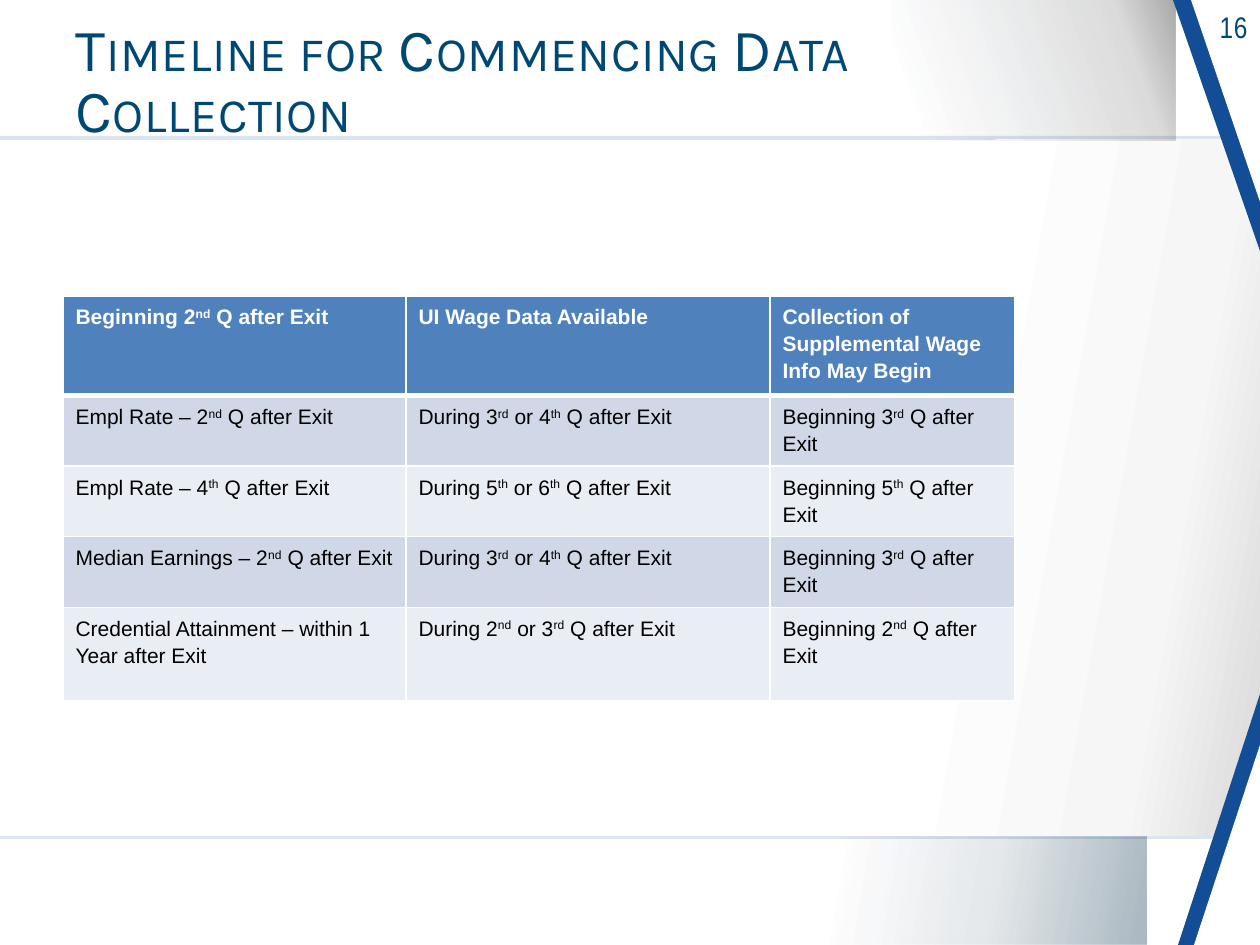
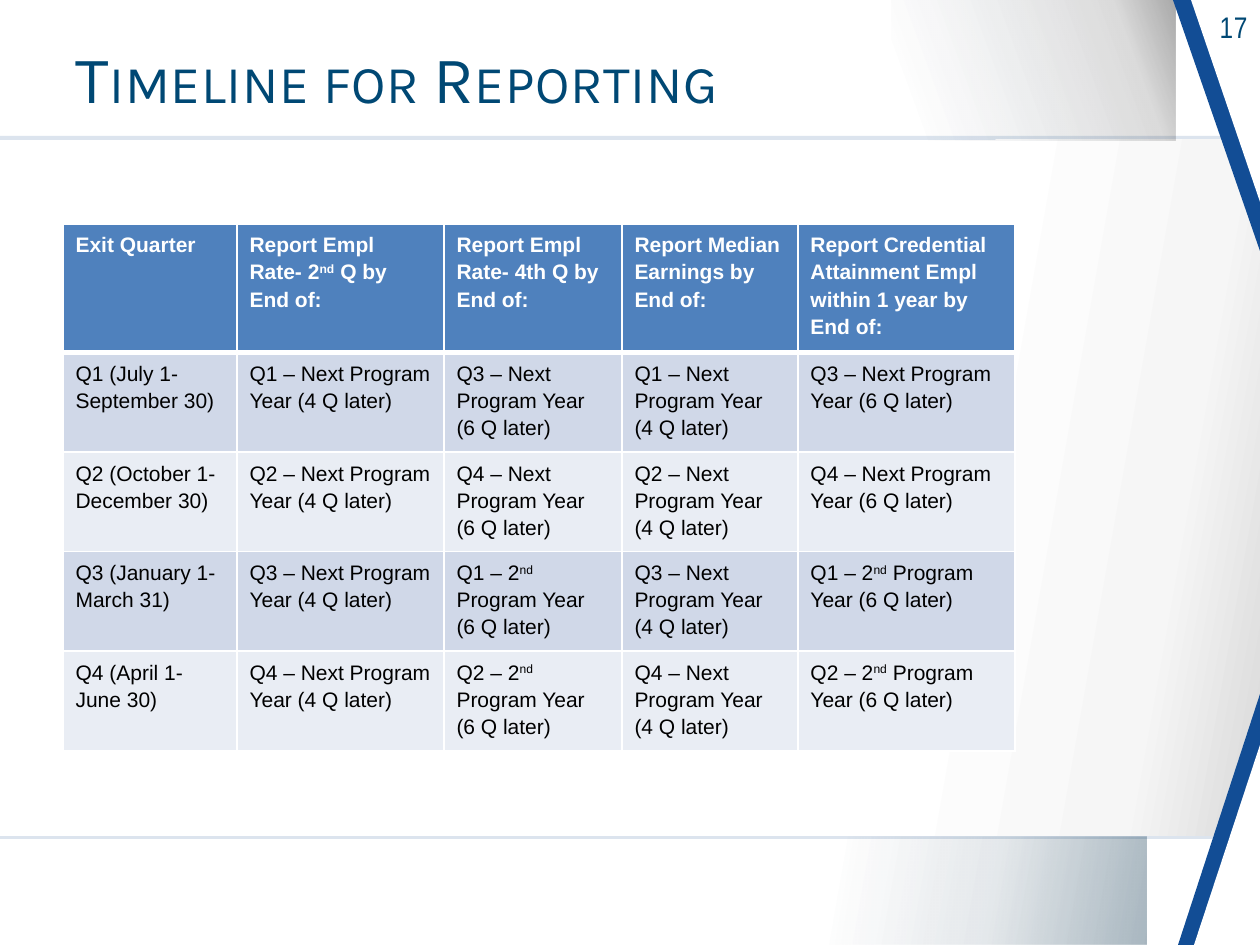
"""Build two timeline slides that share one frame, title style and table style."""
from lxml import etree
from pptx import Presentation
from pptx import util as u
from pptx.dml.color import RGBColor
from pptx.enum import shapes, text
from pptx.oxml.ns import qn

PX_PER_INCH = 126
COLOURS = {
    "white": "FFFFFF", "black": "000000", "navy": "002C47", "title": "004874",
    "edge": "124D95", "band": "275A99", "pale": "F6F6F6", "grey": "D9D9D9",
    "header": "4F81BD", "odd": "D0D8E8", "even": "E9EDF4",
}
TITLE_BOX = (63, 30, 953, 107)
NUMBER_BOX = (1159, 3, 101, 49)

COMMENCING_ROWS = [
    ["Beginning 2^nd^ Q after Exit", "UI Wage Data Available",
     "Collection of Supplemental Wage Info May Begin"],
    ["Empl Rate – 2^nd^ Q after Exit", "During 3^rd^ or 4^th^ Q after Exit",
     "Beginning 3^rd^ Q after Exit"],
    ["Empl Rate – 4^th^ Q after Exit", "During 5^th^ or 6^th^ Q after Exit",
     "Beginning 5^th^ Q after Exit"],
    ["Median Earnings – 2^nd^ Q after Exit", "During 3^rd^ or 4^th^ Q after Exit",
     "Beginning 3^rd^ Q after Exit"],
    ["Credential Attainment – within 1 Year after Exit",
     "During 2^nd^ or 3^rd^ Q after Exit", "Beginning 2^nd^ Q after Exit"],
]
REPORTING_HEADER = [
    "Exit Quarter", "Report Empl Rate- 2^nd^ Q by End of:",
    "Report Empl Rate- 4th Q by End of:", "Report Median Earnings by End of:",
    "Report Credential Attainment Empl within 1 year by End of:",
]
EXIT_QUARTERS = [
    ("Q1 (July 1-September 30)", "Q1", "Q3 – Next"),
    ("Q2 (October 1- December 30)", "Q2", "Q4 – Next"),
    ("Q3 (January 1- March 31)", "Q3", "Q1 – 2^nd^"),
    ("Q4 (April 1- June 30)", "Q4", "Q2 – 2^nd^"),
]


def px(length):
    """Turn px into EMU."""
    return u.Emu(round(length * u.Inches(1) / PX_PER_INCH))


def box_emu(box):
    """Turn a px box into EMU lengths."""
    return [px(length) for length in box]


def rgb(name):
    """Look up a named colour."""
    return RGBColor.from_string(COLOURS[name])


def add_solid(parent, name, opacity=100):
    """Append a colour element with an opacity in percent."""
    colour = etree.SubElement(parent, qn("a:srgbClr"), val=COLOURS[name])
    if opacity < 100:
        etree.SubElement(colour, qn("a:alpha"), val=str(opacity * 1000))


def add_panel(slide, kind, box, colour="white", opacity=100):
    """Add a borderless, shadowless shape with a solid fill."""
    shape = slide.shapes.add_shape(kind, *box_emu(box))
    shape.shadow.inherit = False
    shape.line.fill.background()
    shape.fill.solid()
    shape.fill.fore_color.rgb = rgb(colour)
    if opacity < 100:
        fill = shape.element.spPr.find(qn("a:solidFill"))
        fill.clear()
        add_solid(fill, colour, opacity)
    return shape


def add_gradient(slide, box, angle, stops):
    """Add a rectangle whose fill runs through (position, colour, opacity) stops."""
    shape = add_panel(slide, shapes.MSO_SHAPE.RECTANGLE, box)
    solid = shape.element.spPr.find(qn("a:solidFill"))
    gradient = etree.Element(qn("a:gradFill"), rotWithShape="1")
    stop_list = etree.SubElement(gradient, qn("a:gsLst"))
    for position, colour, opacity in stops:
        stop = etree.SubElement(stop_list, qn("a:gs"), pos=str(position * 1000))
        add_solid(stop, colour, opacity)
    etree.SubElement(gradient, qn("a:lin"), ang=str(angle * 60000), scaled="0")
    solid.getparent().replace(solid, gradient)


def add_corner(slide, box, colour, top):
    """Add a right-angled triangle against the right edge, at the top or bottom."""
    shape = add_panel(slide, shapes.MSO_SHAPE.ISOSCELES_TRIANGLE, box, colour)
    shape.adjustments[0] = 1
    if top:
        shape.element.spPr.find(qn("a:xfrm")).set("flipV", "1")


def draw_frame(slide, layout):
    """Draw the bands and corners and move them to the shared layout."""
    before = len(slide.shapes)
    add_panel(slide, shapes.MSO_SHAPE.RECTANGLE, (0, 136, 1260, 703), "band", 16)
    add_gradient(slide, (0, 140, 1260, 696), 10,
                 [(0, "white", 100), (72, "white", 100), (90, "pale", 100), (100, "grey", 100)])
    add_gradient(slide, (810, 837, 337, 108), 10,
                 [(10, "navy", 0), (56, "navy", 11), (100, "navy", 34)])
    add_gradient(slide, (892, 0, 283, 141), 340,
                 [(10, "navy", 0), (81, "black", 14), (100, "black", 34)])
    add_corner(slide, (1173, 0, 87, 251), "edge", True)
    add_corner(slide, (1191, 0, 69, 202), "white", True)
    add_corner(slide, (1178, 694, 82, 251), "edge", False)
    add_corner(slide, (1194, 745, 66, 200), "white", False)
    for shape in list(slide.shapes)[before:]:
        layout.shapes.element.append(shape.element)


def style_font(font, name, size, colour, bold=False):
    """Set face, size, colour and weight."""
    font.name = name
    font.size = u.Pt(size)
    font.color.rgb = rgb(colour)
    font.bold = bold


def set_title(slide, box, title, size):
    """Place the title placeholder and give it small capitals."""
    shape = slide.shapes.title
    shape.left, shape.top, shape.width, shape.height = box_emu(box)
    frame = shape.text_frame
    frame.text = title
    frame.word_wrap = True
    frame.auto_size = text.MSO_AUTO_SIZE.NONE
    frame.vertical_anchor = text.MSO_ANCHOR.MIDDLE
    paragraph = frame.paragraphs[0]
    paragraph.alignment = text.PP_ALIGN.LEFT
    paragraph.line_spacing = 0.85
    style_font(paragraph.font, "Karla", size, "title")
    properties = paragraph.runs[0].font._element
    properties.set("cap", "small")
    properties.set("spc", "40")


def add_number(slide, box, number):
    """Add the page number in the top right corner."""
    frame = slide.shapes.add_textbox(*box_emu(box)).text_frame
    frame.word_wrap = True
    frame.text = str(number)
    paragraph = frame.paragraphs[0]
    paragraph.alignment = text.PP_ALIGN.RIGHT
    style_font(paragraph.font, "Arial Narrow", 17, "title")
    paragraph.runs[0].font._element.set("spc", "40")


def set_borders(cell, top, bottom):
    """Give a cell white borders, with top and bottom widths in points."""
    properties = cell._tc.get_or_add_tcPr()
    for side, width in (("L", 1), ("R", 1), ("T", top), ("B", bottom)):
        line = etree.SubElement(properties, qn(f"a:ln{side}"), w=str(u.Pt(width)))
        add_solid(etree.SubElement(line, qn("a:solidFill")), "white")


def fill_cell(cell, content, row):
    """Write a cell, raising the parts between carets, and style it by its row."""
    paragraph = cell.text_frame.paragraphs[0]
    paragraph.line_spacing = 1.15
    style_font(paragraph.font, "Arial", 12, "black" if row else "white", row == 0)
    for index, part in enumerate(content.split("^")):
        if part:
            run = paragraph.add_run()
            run.text = part
            if index % 2:
                run.font._element.set("baseline", "30000")
    set_borders(cell, 3 if row == 1 else 1, 1 if row else 3)
    cell.fill.solid()
    cell.fill.fore_color.rgb = rgb(("odd" if row % 2 else "even") if row else "header")


def add_timeline(slide, left, top, widths, heights, rows):
    """Add a timeline table from its corner, column widths and row heights."""
    box = (left, top, sum(widths), sum(heights))
    table = slide.shapes.add_table(len(rows), len(widths), *box_emu(box)).table
    for column, width in zip(table.columns, widths):
        column.width = px(width)
    for row, (height, contents) in enumerate(zip(heights, rows)):
        table.rows[row].height = px(height)
        for column, content in enumerate(contents):
            fill_cell(table.cell(row, column), content, row)


def reporting_rows():
    """Build the reporting rows from the due quarter of each exit quarter."""
    rows = [REPORTING_HEADER]
    for exit_quarter, early, late in EXIT_QUARTERS:
        four_later = f"{early} – Next Program Year (4 Q later)"
        six_later = f"{late} Program Year (6 Q later)"
        rows.append([exit_quarter, four_later, six_later, four_later, six_later])
    return rows


def add_timeline_slide(presentation, layout, number, title, size, **table):
    """Add a slide with title, page number and timeline table."""
    slide = presentation.slides.add_slide(layout)
    add_number(slide, NUMBER_BOX, number)
    set_title(slide, TITLE_BOX, title, size)
    add_timeline(slide, TITLE_BOX[0], **table)
    return slide


def main():
    """Build and save the presentation."""
    presentation = Presentation()
    presentation.slide_width, presentation.slide_height = px(1260), px(945)
    layout = presentation.slide_layouts.get_by_name("Title Only")
    first = add_timeline_slide(
        presentation, layout, 16, "Timeline for Commencing Data Collection", 34.2,
        top=296, widths=[343, 364, 245], heights=[94, 67, 66, 67, 93], rows=COMMENCING_ROWS)
    draw_frame(first, layout)
    add_timeline_slide(
        presentation, layout, 17, "Timeline for Reporting", 38,
        top=224, widths=[174, 207, 178, 176, 217], heights=[120] + [94] * 4,
        rows=reporting_rows())
    presentation.save("out.pptx")


if __name__ == "__main__":
    main()
